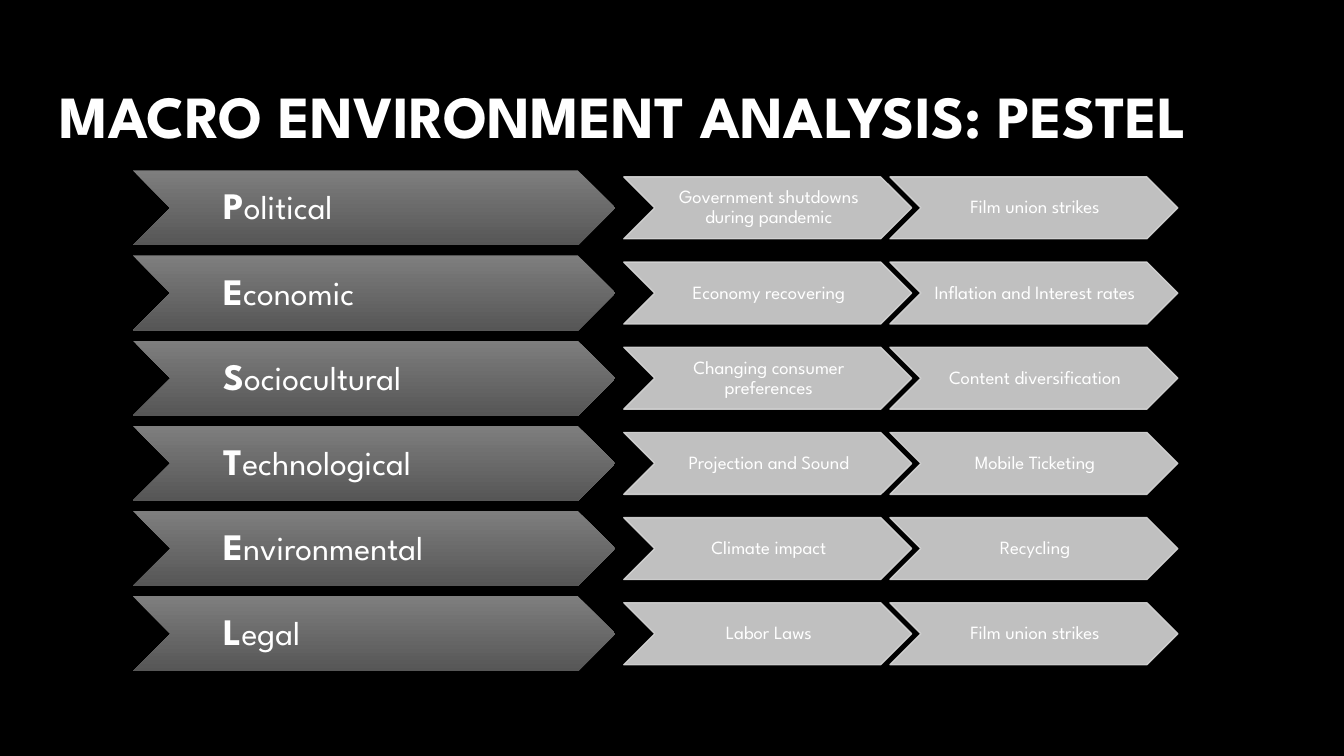
from lxml import etree
from pptx import Presentation
from pptx.dml.color import RGBColor
from pptx.enum.shapes import MSO_SHAPE
from pptx.enum.text import MSO_ANCHOR, MSO_AUTO_SIZE, PP_ALIGN
from pptx.oxml.ns import qn
from pptx.util import Cm, Pt

CHEVRON = MSO_SHAPE.CHEVRON
TOP, MIDDLE = MSO_ANCHOR.TOP, MSO_ANCHOR.MIDDLE
LEFT, CENTER = PP_ALIGN.LEFT, PP_ALIGN.CENTER
NO_AUTOFIT = MSO_AUTO_SIZE.NONE

FONT = "League Spartan"
COLORS = {
    "background": "000000",
    "text": "FFFFFF",
    "label_top": "7E7E7E",
    "label_bottom": "565656",
    "factor": "D5D5D5",
}

# Lengths in centimetres
ROW_TOP, ROW_PITCH, ROW_HEIGHT = 3.22, 1.61, 1.42
LABEL_LEFT, LABEL_WIDTH = 2.51, 9.12
FACTOR_LEFT, FACTOR_STEP = 11.79, 5.03
FACTOR_WIDTH, FACTOR_HEIGHT = 5.44, 1.17

PESTEL = [
    ("Political", ["Government shutdowns during pandemic", "Film union strikes"]),
    ("Economic", ["Economy recovering", "Inflation and Interest rates"]),
    ("Sociocultural", ["Changing consumer preferences", "Content diversification"]),
    ("Technological", ["Projection and Sound", "Mobile Ticketing"]),
    ("Environmental", ["Climate impact", "Recycling"]),
    ("Legal", ["Labor Laws", "Film union strikes"]),
]


def color(name):
    return RGBColor.from_string(COLORS[name])


def set_font(para, size):
    para.font.name = FONT
    para.font.size = Pt(size)
    para.font.color.rgb = color("text")


def set_opacity(properties, percent):
    """Make every solid colour below the element partly transparent."""
    for solid in properties.iter(qn("a:solidFill")):
        alpha = etree.SubElement(solid[0], qn("a:alpha"))
        alpha.set("val", str(percent * 1000))


def add_chevron(page, left, top, width, height):
    chevron = page.shapes.add_shape(CHEVRON, Cm(left), Cm(top), Cm(width), Cm(height))
    chevron.shadow.inherit = False
    return chevron


def add_text_area(page, left, top, width, height):
    """Add a vertically centred text box and return its paragraph."""
    box = page.shapes.add_textbox(Cm(left), Cm(top), Cm(width), Cm(height))
    frame = box.text_frame
    frame.word_wrap = True
    frame.vertical_anchor = MIDDLE
    frame.margin_left = frame.margin_top = frame.margin_bottom = Cm(0.03)
    frame.margin_right = 0
    para = frame.paragraphs[0]
    para.line_spacing = 0.9
    return para


def place_title(page, text, left, top, width, height):
    title = page.shapes.title
    title.left, title.top, title.width, title.height = map(Cm, (left, top, width, height))
    frame = title.text_frame
    frame.text = text
    frame.word_wrap = True
    frame.auto_size = NO_AUTOFIT
    frame.vertical_anchor = TOP
    frame.margin_left = frame.margin_right = Cm(0.25)
    frame.margin_top = frame.margin_bottom = Cm(0.25)
    para = frame.paragraphs[0]
    para.alignment = LEFT
    set_font(para, 32)
    para.font.bold = True


def place_label(page, text, left, top, width, height):
    """Dark chevron whose text starts with a bold initial."""
    chevron = add_chevron(page, left, top, width, height)
    chevron.line.fill.background()
    chevron.fill.gradient()
    chevron.fill.gradient_angle = 270
    for stop, name in zip(chevron.fill.gradient_stops, ("label_top", "label_bottom")):
        stop.color.rgb = color(name)

    para = add_text_area(page, left + 0.71, top, width - 1.42, height)
    para.alignment = LEFT
    para._p.get_or_add_pPr().set("marL", str(Cm(0.97)))
    set_font(para, 18)
    initial = para.add_run()
    initial.text = text[0]
    initial.font.bold = True
    initial.font.size = Pt(20)
    para.add_run().text = text[1:]


def place_factor(page, text, left, top, width, height):
    """Light chevron with centred text."""
    chevron = add_chevron(page, left, top, width, height)
    chevron.fill.solid()
    chevron.fill.fore_color.rgb = color("factor")
    chevron.line.color.rgb = color("factor")
    chevron.line.width = Pt(0.75)
    set_opacity(chevron._element.spPr, 90)

    para = add_text_area(page, left + 0.59, top, width - 1.17, height)
    para.alignment = CENTER
    set_font(para, 10)
    para.add_run().text = text


def place_row(page, label, factors, top):
    place_label(page, label, LABEL_LEFT, top, LABEL_WIDTH, ROW_HEIGHT)
    factor_top = top + (ROW_HEIGHT - FACTOR_HEIGHT) / 2
    for column, factor in enumerate(factors):
        place_factor(page, factor, FACTOR_LEFT + column * FACTOR_STEP,
                     factor_top, FACTOR_WIDTH, FACTOR_HEIGHT)


def main():
    deck = Presentation()
    deck.slide_width, deck.slide_height = Cm(25.4), Cm(14.29)
    page = deck.slides.add_slide(deck.slide_layouts.get_by_name("Title Only"))
    page.background.fill.solid()
    page.background.fill.fore_color.rgb = color("background")

    place_title(page, "MACRO ENVIRONMENT ANALYSIS: PESTEL", 0.87, 1.24, 23.67, 1.6)

    # One row per PESTEL force
    for row, (label, factors) in enumerate(PESTEL):
        place_row(page, label, factors, ROW_TOP + row * ROW_PITCH)

    deck.save("out.pptx")


if __name__ == "__main__":
    main()
